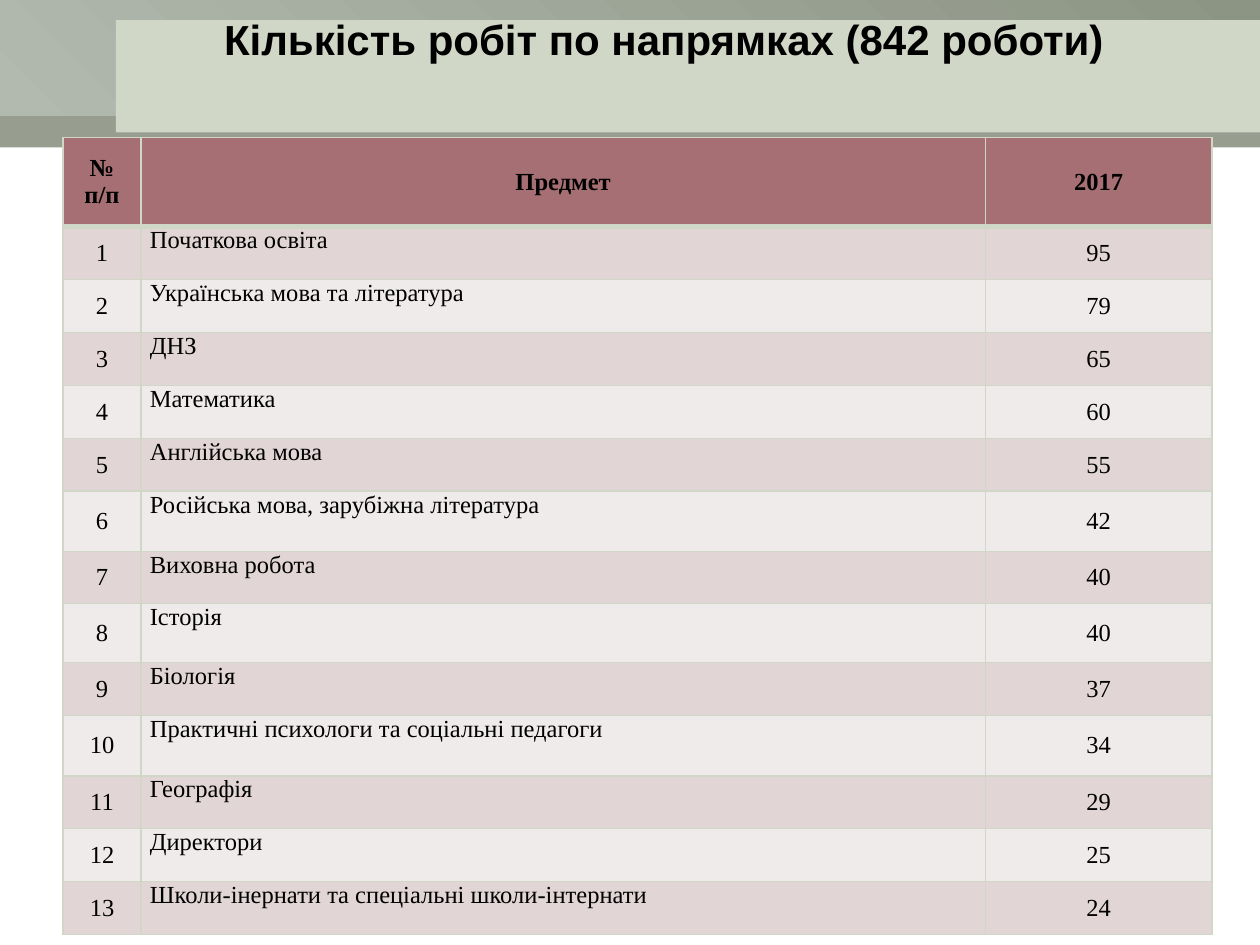
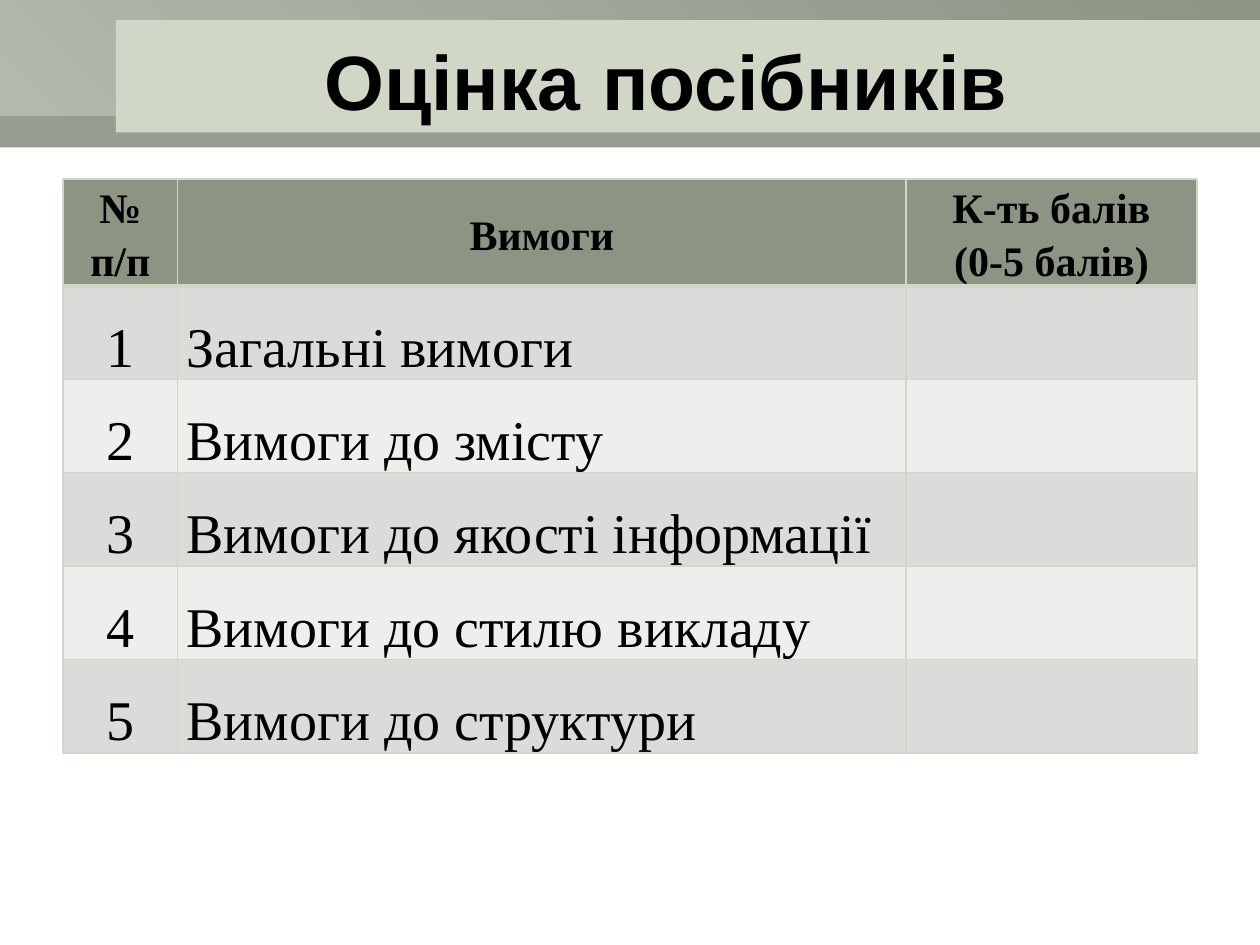
from lxml import etree
from pptx import Presentation
from pptx import util as u
from pptx.dml import color
from pptx.enum import shapes, text
from pptx.oxml import ns

PX = 9144
SAGE, PALE, MIST = "8C9484", "D1D7C7", "B2B9AF"
SANS, SERIF = "Arial", "Times New Roman"
MID, TOP = text.MSO_ANCHOR.MIDDLE, text.MSO_ANCHOR.TOP
CENTER, LEFT = text.PP_ALIGN.CENTER, text.PP_ALIGN.LEFT

WORKS = [
    ("Початкова освіта", 95), ("Українська мова та література", 79),
    ("ДНЗ", 65), ("Математика", 60), ("Англійська мова", 55),
    ("Російська мова, зарубіжна література", 42), ("Виховна робота", 40),
    ("Історія", 40), ("Біологія", 37),
    ("Практичні психологи та соціальні педагоги", 34), ("Географія", 29),
    ("Директори", 25), ("Школи-інернати та спеціальні школи-інтернати", 24),
]
NEEDS = [
    "Загальні вимоги", "Вимоги до змісту", "Вимоги до якості інформації",
    "Вимоги до стилю викладу", "Вимоги до структури",
]
WORK_LOOK = {
    "cols": [62, 670, 180],
    "rows": [71] + [42] * 5 + [48, 41, 47, 42, 48] + [42] * 3,
    "fills": ["A56F73", "E1D5D5", "F0EBEB"],
    "head": {"size": 14, "space": 1}, "body": {"size": 14, "space": 1},
}
NEED_LOOK = {
    "cols": [91, 578, 231],
    "rows": [85] + [74] * 5,
    "fills": [SAGE, "DADCD9", "EEEEED"],
    "head": {"size": 24, "space": 1.15}, "body": {"size": 32, "space": 1.5},
}


def px(*vals):
    """Turn px lengths into EMU."""
    return [u.Emu(val * PX) for val in vals]


def rgb(code):
    """Turn a hex string into a colour."""
    return color.RGBColor.from_string(code)


def paint(fill, code):
    """Give a fill one solid colour."""
    fill.solid()
    fill.fore_color.rgb = rgb(code)


def style(para, align, space=None, **font):
    """Align a paragraph and format its font in black."""
    para.alignment = align
    if space:
        para.line_spacing = space
    font["size"] = u.Pt(font["size"])
    for key, val in font.items():
        setattr(para.font, key, val)
    para.font.color.rgb = rgb("000000")


def band(slide, box):
    """Add a plain rectangle without outline."""
    rect = slide.shapes.add_shape(shapes.MSO_SHAPE.RECTANGLE, *px(*box))
    rect.shadow.inherit = False
    rect.line.fill.background()
    return rect


def dress(slide):
    """Draw the header bands and move them to the slide's layout."""
    strip = band(slide, (0, 75, 1000, 42))
    paint(strip.fill, SAGE)
    hue = strip.element.find(".//" + ns.qn("a:srgbClr"))
    etree.SubElement(hue, ns.qn("a:alpha"), val="90000")

    sky = band(slide, (0, 0, 1000, 92))
    sky.fill.gradient()
    sky.fill.gradient_angle = 45
    for stop, code in zip(sky.fill.gradient_stops, (MIST, SAGE)):
        stop.color.rgb = rgb(code)

    plate = band(slide, (92, 16, 908, 89))
    paint(plate.fill, PALE)
    for item in (strip, sky, plate):
        slide.slide_layout.shapes.element.append(item.element)


def head(slide, words, box, size):
    """Place and format the slide title."""
    title = slide.shapes.title
    title.left, title.top, title.width, title.height = px(*box)
    frame = title.text_frame
    frame.text = words
    frame.word_wrap = True
    frame.vertical_anchor = MID
    style(frame.paragraphs[0], CENTER, size=size, name=SANS, bold=True)


def edge(cell, row):
    """Add cell borders, thick under the header row."""
    thick = {0: "lnB", 1: "lnT"}.get(row)
    props = cell._tc.get_or_add_tcPr()
    for spot, tag in enumerate(("lnL", "lnR", "lnT", "lnB")):
        width = u.Pt(3 if tag == thick else 1)
        line = etree.Element(ns.qn("a:" + tag), w=str(width))
        solid = etree.SubElement(line, ns.qn("a:solidFill"))
        etree.SubElement(solid, ns.qn("a:srgbClr"), val=PALE)
        props.insert(spot, line)


def write(cell, words, row, col, look):
    """Fill one cell with formatted text."""
    cell.text = words
    cell.margin_left = cell.margin_right = px(7)[0]
    cell.margin_top = cell.margin_bottom = 0
    plain = row > 0 and col == 1
    cell.vertical_anchor = TOP if plain else MID
    font = look["body" if row else "head"]
    for para in cell.text_frame.paragraphs:
        style(para, LEFT if plain else CENTER, name=SERIF, bold=row == 0, **font)


def grid(slide, data, top, look):
    """Add a table with a coloured header and banded rows."""
    cols, rows = look["cols"], look["rows"]
    box = px(50, top, sum(cols), sum(rows))
    table = slide.shapes.add_table(len(rows), len(cols), *box).table
    table.horz_banding = False
    for col, wide in zip(table.columns, px(*cols)):
        col.width = wide
    for row, tall in zip(table.rows, px(*rows)):
        row.height = tall
    first, odd, even = look["fills"]
    for row, line in enumerate(data):
        for col, words in enumerate(line):
            cell = table.cell(row, col)
            paint(cell.fill, (odd if row % 2 else even) if row else first)
            edge(cell, row)
            if words:
                write(cell, words, row, col, look)


def main():
    """Build both slides and save them."""
    deck = Presentation()
    deck.slide_width, deck.slide_height = px(1000, 750)
    layout = deck.slide_layouts[5]

    works = deck.slides.add_slide(layout)
    dress(works)
    head(works, "Кількість робіт по напрямках (842 роботи)", (102, 0, 850, 62), 24)
    data = [("№ п/п", "Предмет", "2017")]
    data += [(str(num), name, str(count))
             for num, (name, count) in enumerate(WORKS, 1)]
    grid(works, data, 109, WORK_LOOK)

    needs = deck.slides.add_slide(layout)
    head(needs, "Оцінка посібників", (104, 26, 850, 75), 44)
    data = [("№ п/п", "Вимоги", "К-ть балів\n(0-5 балів)")]
    data += [(str(num), name, "") for num, name in enumerate(NEEDS, 1)]
    grid(needs, data, 142, NEED_LOOK)

    deck.save("out.pptx")


if __name__ == "__main__":
    main()
